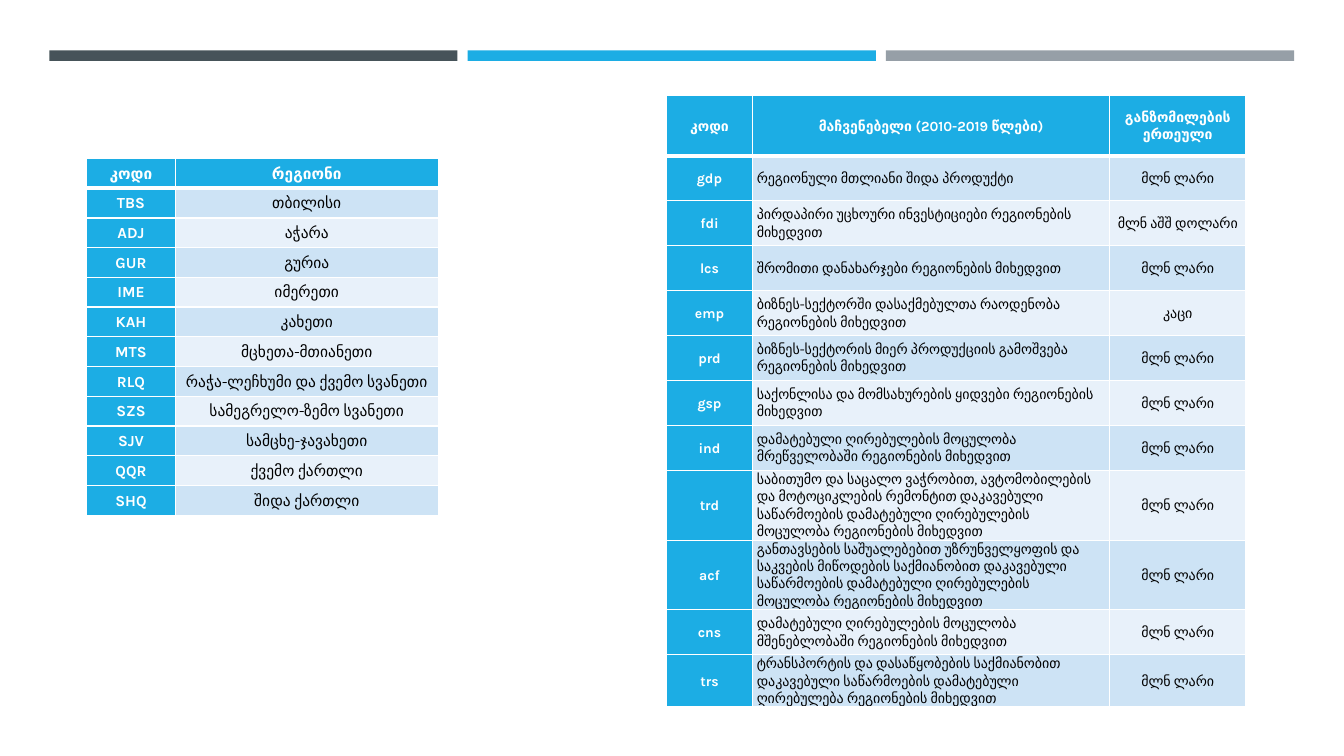
from dataclasses import dataclass

from lxml.etree import SubElement
from pptx import Presentation
from pptx.dml.color import RGBColor
from pptx.enum.shapes import MSO_SHAPE
from pptx.enum.text import MSO_ANCHOR, PP_ALIGN
from pptx.oxml.ns import qn
from pptx.util import Pt


@dataclass(frozen=True)
class Theme:
    font: str = "Karla"
    accent: str = "1CADE4"
    dark: str = "465359"
    grey: str = "969FA7"
    band: str = "CDE3F5"
    light_band: str = "E8F1FA"
    white: str = "FFFFFF"
    text: str = "000000"
    region_size: float = 11
    indicator_size: float = 10


theme = Theme()


def style_cell(cell, wording, size, inset, align, is_label, fill, bottom_width):
    cell.fill.solid()
    cell.fill.fore_color.rgb = RGBColor.from_string(fill)
    cell.vertical_anchor = MSO_ANCHOR.MIDDLE
    cell.margin_left = cell.margin_right = Pt(inset)
    cell.margin_top = cell.margin_bottom = 0
    paragraph = cell.text_frame.paragraphs[0]
    paragraph.alignment = align
    paragraph.line_spacing = 1.07
    run = paragraph.add_run()
    run.text = wording
    run.font.name = theme.font
    run.font.size = Pt(size)
    run.font.bold = is_label
    run.font.color.rgb = RGBColor.from_string(theme.white if is_label else theme.text)
    properties = cell._tc.get_or_add_tcPr()
    for position, side in enumerate(("lnL", "lnR", "lnT", "lnB")):
        width = bottom_width if side == "lnB" else 1
        border = SubElement(properties, qn(f"a:{side}"), w=str(Pt(width)))
        border_fill = SubElement(border, qn("a:solidFill"))
        SubElement(border_fill, qn("a:srgbClr"), val=theme.white)
        properties.insert(position, border)


def add_code_table(slide, left, top, widths, heights, rows, size, inset, body_aligns):
    table = slide.shapes.add_table(
        len(rows), len(widths), Pt(left), Pt(top), Pt(sum(widths)), Pt(sum(heights))
    ).table
    table.first_col = True
    for column, width in zip(table.columns, widths):
        column.width = Pt(width)
    for r, (wordings, height) in enumerate(zip(rows, heights)):
        table.rows[r].height = Pt(height)
        band = theme.band if r % 2 else theme.light_band
        for c, wording in enumerate(wordings):
            is_label = r == 0 or c == 0
            style_cell(
                table.cell(r, c), wording, size, inset,
                body_aligns[c] if r else PP_ALIGN.CENTER,
                is_label, theme.accent if is_label else band,
                1 if r else 3,
            )


presentation = Presentation()
presentation.slide_width = Pt(960)
presentation.slide_height = Pt(540)
slide = presentation.slides.add_slide(presentation.slide_layouts[6])

for position, colour in enumerate((theme.dark, theme.accent, theme.grey)):
    top_bar = slide.shapes.add_shape(
        MSO_SHAPE.RECTANGLE, Pt(35.2 + position * 298.8), Pt(36), Pt(291.6), Pt(7.5)
    )
    top_bar.shadow.inherit = False
    top_bar.fill.solid()
    top_bar.fill.fore_color.rgb = RGBColor.from_string(colour)
    top_bar.line.fill.background()

regions = [
    ("კოდი", "რეგიონი"),
    ("TBS", "თბილისი"),
    ("ADJ", "აჭარა"),
    ("GUR", "გურია"),
    ("IME", "იმერეთი"),
    ("KAH", "კახეთი"),
    ("MTS", "მცხეთა-მთიანეთი"),
    ("RLQ", "რაჭა-ლეჩხუმი და ქვემო სვანეთი"),
    ("SZS", "სამეგრელო-ზემო სვანეთი"),
    ("SJV", "სამცხე-ჯავახეთი"),
    ("QQR", "ქვემო ქართლი"),
    ("SHQ", "შიდა ქართლი"),
]
add_code_table(
    slide, 62, 113.2, (63.2, 188), [21.24] * len(regions), regions,
    theme.region_size, 5, (PP_ALIGN.CENTER, PP_ALIGN.CENTER),
)

million_lari = "მლნ ლარი"
indicators = [
    ("კოდი", "მაჩვენებელი (2010-2019 წლები)", "განზომილების ერთეული"),
    ("gdp", "რეგიონული მთლიანი შიდა პროდუქტი", million_lari),
    ("fdi", "პირდაპირი უცხოური ინვესტიციები რეგიონების მიხედვით", "მლნ აშშ დოლარი"),
    ("lcs", "შრომითი დანახარჯები რეგიონების მიხედვით", million_lari),
    ("emp", "ბიზნეს-სექტორში დასაქმებულთა რაოდენობა რეგიონების მიხედვით", "კაცი"),
    ("prd", "ბიზნეს-სექტორის მიერ პროდუქციის გამოშვება რეგიონების მიხედვით", million_lari),
    ("gsp", "საქონლისა და მომსახურების ყიდვები რეგიონების მიხედვით", million_lari),
    ("ind", "დამატებული ღირებულების მოცულობა მრეწველობაში რეგიონების მიხედვით", million_lari),
    ("trd", "საბითუმო და საცალო ვაჭრობით, ავტომობილების და მოტოციკლების რემონტით "
            "დაკავებული საწარმოების დამატებული ღირებულების მოცულობა რეგიონების მიხედვით",
     million_lari),
    ("acf", "განთავსების საშუალებებით უზრუნველყოფის და საკვების მიწოდების საქმიანობით "
            "დაკავებული საწარმოების დამატებული ღირებულების მოცულობა რეგიონების მიხედვით",
     million_lari),
    ("cns", "დამატებული ღირებულების მოცულობა მშენებლობაში რეგიონების მიხედვით", million_lari),
    ("trs", "ტრანსპორტის და დასაწყობების საქმიანობით დაკავებული საწარმოების "
            "დამატებული ღირებულება რეგიონების მიხედვით", million_lari),
]
indicator_heights = [43] + [32.1] * 7 + [34.5] * 2 + [32.1] * 2
add_code_table(
    slide, 476, 68.4, (61.6, 255, 97.4), indicator_heights, indicators,
    theme.indicator_size, 3, (PP_ALIGN.CENTER, PP_ALIGN.LEFT, PP_ALIGN.CENTER),
)

presentation.save("out.pptx")
